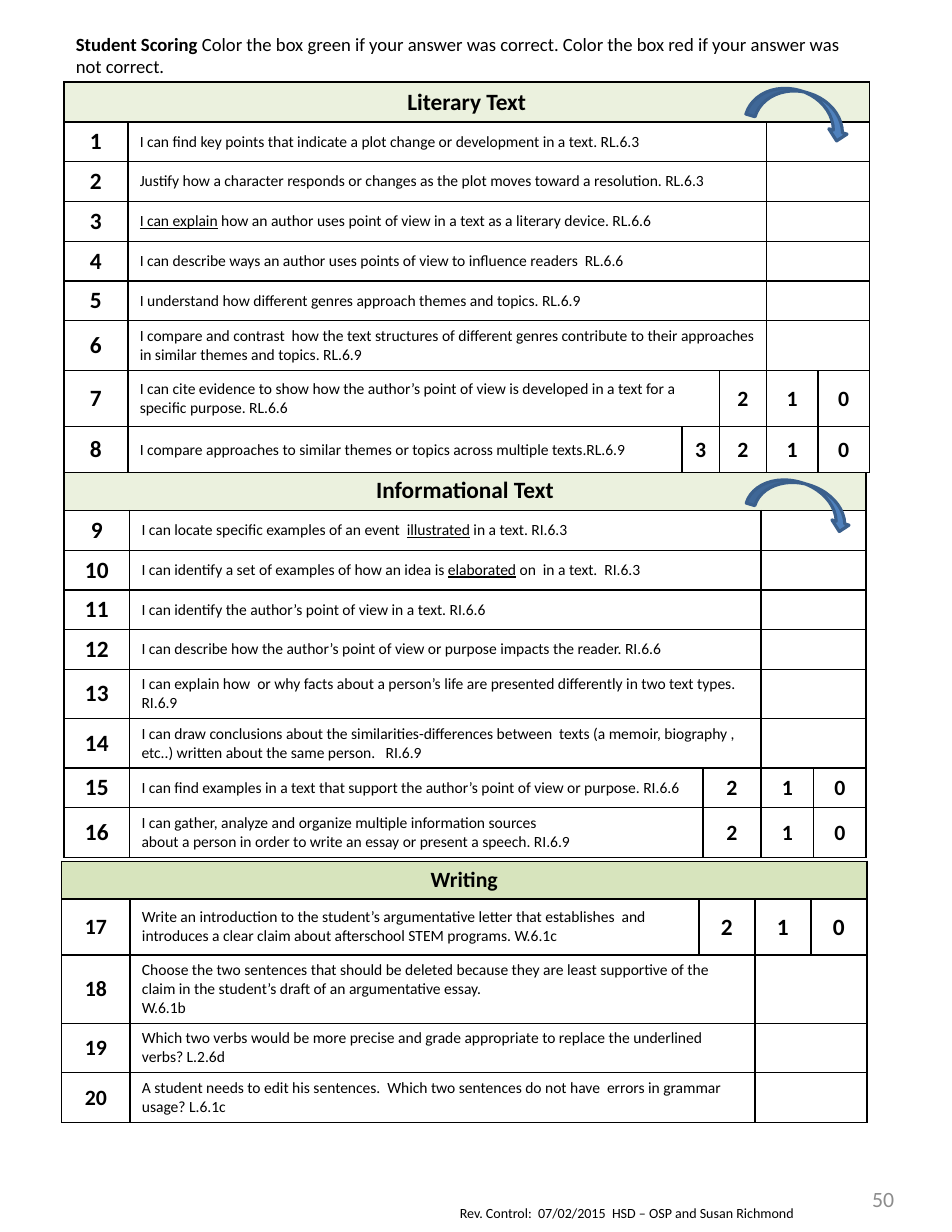
import pptx
import pptx.dml.color
import pptx.enum.shapes
import pptx.enum.text
import pptx.oxml
import pptx.oxml.ns
import pptx.util

Cm = pptx.util.Cm
Pt = pptx.util.Pt
ALIGN = pptx.enum.text.PP_ALIGN
MIDDLE = pptx.enum.text.MSO_ANCHOR.MIDDLE

LITERARY = [
    ("1", "I can find key points that indicate a plot change or development in a text. RL.6.3", ""),
    ("2", "Justify how a character responds or changes as the plot moves toward a resolution. RL.6.3", ""),
    ("3", "_I can explain_ how an author uses point of view in a text as a literary device. RL.6.6", ""),
    ("4", "I can describe ways an author uses points of view to influence readers  RL.6.6", ""),
    ("5", "I understand how different genres approach themes and topics. RL.6.9", ""),
    ("6", "I compare and contrast  how the text structures of different genres contribute to their "
          "approaches in similar themes and topics. RL.6.9", ""),
    ("7", "I can cite evidence to show how the author’s point of view is developed in a text for a "
          "specific purpose. RL.6.6", "210"),
    ("8", "I compare approaches to similar themes or topics across multiple texts.RL.6.9", "3210"),
]
INFORMATIONAL = [
    ("9", "I can locate specific examples of an event  _illustrated_ in a text. RI.6.3", ""),
    ("10", "I can identify a set of examples of how an idea is _elaborated_ on  in a text.  RI.6.3", ""),
    ("11", "I can identify the author’s point of view in a text. RI.6.6", ""),
    ("12", "I can describe how the author’s point of view or purpose impacts the reader. RI.6.6", ""),
    ("13", "I can explain how  or why facts about a person’s life are presented differently in two "
           "text types. RI.6.9", ""),
    ("14", "I can draw conclusions about the similarities-differences between  texts (a memoir, "
           "biography , etc..) written about the same person.   RI.6.9", ""),
    ("15", "I can find examples in a text that support the author’s point of view or purpose. RI.6.6", "210"),
    ("16", "I can gather, analyze and organize multiple information sources\n"
           "about a person in order to write an essay or present a speech. RI.6.9", "210"),
]
WRITING = [
    ("17", "Write an introduction to the student’s argumentative letter that establishes  and "
           "introduces a clear claim about afterschool STEM programs. W.6.1c", "210"),
    ("18", "Choose the two sentences that should be deleted because they are least supportive of the "
           "claim in the student’s draft of an argumentative essay.\nW.6.1b", ""),
    ("19", "Which two verbs would be more precise and grade appropriate to replace the underlined "
           "verbs? L.2.6d", ""),
    ("20", "A student needs to edit his sentences.  Which two sentences do not have  errors in "
           "grammar usage? L.6.1c", ""),
]


def rgb(value):
    """Return a colour from a hex string."""
    return pptx.dml.color.RGBColor.from_string(value)


def write(tf, text, size, bold=False, align=ALIGN.LEFT, color="000000"):
    """Write lines of text, underlining what stands between underscores."""
    for i, line in enumerate(text.split("\n")):
        p = tf.add_paragraph() if i else tf.paragraphs[0]
        p.alignment = align
        p.font.name, p.font.size, p.font.bold = "Calibri", Pt(size), bold
        p.font.color.rgb = rgb(color)
        for k, part in enumerate(line.split("_")):
            if part:
                r = p.add_run()
                r.text = part
                if k % 2:
                    r.font.underline = True
        if not line:
            p._p.get_or_add_endParaRPr().set("sz", str(size * 100))


def add_text(s, box, text, size, align=ALIGN.LEFT, color="000000"):
    """Add a wrapping text box and return its frame."""
    tf = s.shapes.add_textbox(*map(Cm, box)).text_frame
    tf.word_wrap = True
    tf.margin_left = tf.margin_right = Cm(0.27)
    write(tf, text, size, align=align, color=color)
    return tf


def style_cell(cell, fill):
    """Give a cell its borders, fill, margins and anchor."""
    tcPr = cell._tc.get_or_add_tcPr()
    for side in "LRTB":
        tcPr.append(pptx.oxml.parse_xml(
            f'<a:ln{side} {pptx.oxml.ns.nsdecls("a")} w="12700"><a:solidFill>'
            f'<a:srgbClr val="000000"/></a:solidFill></a:ln{side}>'))
    cell.fill.solid()
    cell.fill.fore_color.rgb = rgb(fill)
    cell.margin_left = cell.margin_right = Cm(0.27)
    cell.vertical_anchor = MIDDLE


def add_section(s, left, top, cols, heights, title, fill, goals, number_size, score_size):
    """Add one scoring table whose last columns hold the scores or a blank box."""
    n = len(cols)
    frame = s.shapes.add_table(len(heights), n, Cm(left), Cm(top), Cm(sum(cols)), Cm(sum(heights)))
    table = frame.table
    table.first_row = table.horz_banding = False
    for col, width in zip(table.columns, cols):
        col.width = Cm(width)
    for i, height in enumerate(heights):
        table.rows[i].height = Cm(height)
        for j in range(n):
            style_cell(table.cell(i, j), "FFFFFF" if i else fill)
            if not i or goals[i - 1][2] == "":
                write(table.cell(i, j).text_frame, "", 10)
    table.cell(0, 0).merge(table.cell(0, n - 1))
    write(table.cell(0, 0).text_frame, title, number_size, True, ALIGN.CENTER)
    for i, (number, goal, scores) in enumerate(goals, 1):
        first = n - (len(scores) or 2)
        write(table.cell(i, 0).text_frame, number, number_size, True, ALIGN.CENTER)
        if first > 2:
            table.cell(i, 1).merge(table.cell(i, first - 1))
        write(table.cell(i, 1).text_frame, goal, 10)
        if not scores:
            table.cell(i, first).merge(table.cell(i, n - 1))
        for j, score in enumerate(scores, first):
            write(table.cell(i, j).text_frame, score, score_size, True, ALIGN.CENTER)


def add_arrow(s, box, rotation):
    """Add a curved arrow pointing into the answer column."""
    sp = s.shapes.add_shape(pptx.enum.shapes.MSO_SHAPE.CURVED_DOWN_ARROW, *map(Cm, box))
    sp.rotation = rotation
    sp.shadow.inherit = False
    sp.fill.solid()
    sp.fill.fore_color.rgb = rgb("4F81BD")
    sp.line.color.rgb = rgb("3A5F8C")
    sp.line.width = Pt(2)


def add_footer(s):
    """Add the revision note and the page number."""
    add_text(s, (10.16, 27.2, 10.8, 0.66), "Rev. Control:  07/02/2015  HSD – OSP and Susan Richmond", 9)
    tf = add_text(s, (18.21, 26.44, 2.34, 1.5), "50", 14, ALIGN.RIGHT, "8C8C8C")
    tf.vertical_anchor = MIDDLE


def add_intro(s):
    """Add the scoring instructions with a bold lead."""
    tf = add_text(s, (1.45, 0.61, 18.21, 1.3), "Student Scoring ", 12)
    p = tf.paragraphs[0]
    p.runs[0].font.bold = True
    r = p.add_run()
    r.text = "Color the box green if your answer was correct. Color the box red if your answer was not correct."


def main():
    """Build the scoring sheet."""
    prs = pptx.Presentation()
    prs.slide_width, prs.slide_height = Cm(21.59), Cm(27.94)
    s = prs.slides.add_slide(prs.slide_layouts[6])
    add_footer(s)
    add_section(s, 1.45, 10.67, [1.49, 13, 1.32, 1.19, 1.19],
                [0.91] + [0.9] * 4 + [1.12, 1.12, 0.9, 1.12],
                "Informational Text", "EBF1DE", INFORMATIONAL, 15, 14)
    add_section(s, 1.45, 1.86, [1.45, 12.57, 0.84, 1.07, 1.17, 1.17],
                [0.91] + [0.9] * 5 + [1.14, 1.27, 1.04],
                "Literary Text", "EBF1DE", LITERARY, 15, 14)
    add_intro(s)
    add_arrow(s, (16.99, 10.97, 2.41, 0.81), 17)
    add_arrow(s, (16.99, 2.08, 2.36, 0.86), 16.5)
    add_section(s, 1.4, 19.53, [1.55, 12.9, 1.27, 1.27, 1.27],
                [0.86, 1.27, 1.55, 1.12, 1.12],
                "Writing", "D7E4BD", WRITING, 14, 15)
    prs.save("out.pptx")


if __name__ == "__main__":
    main()
